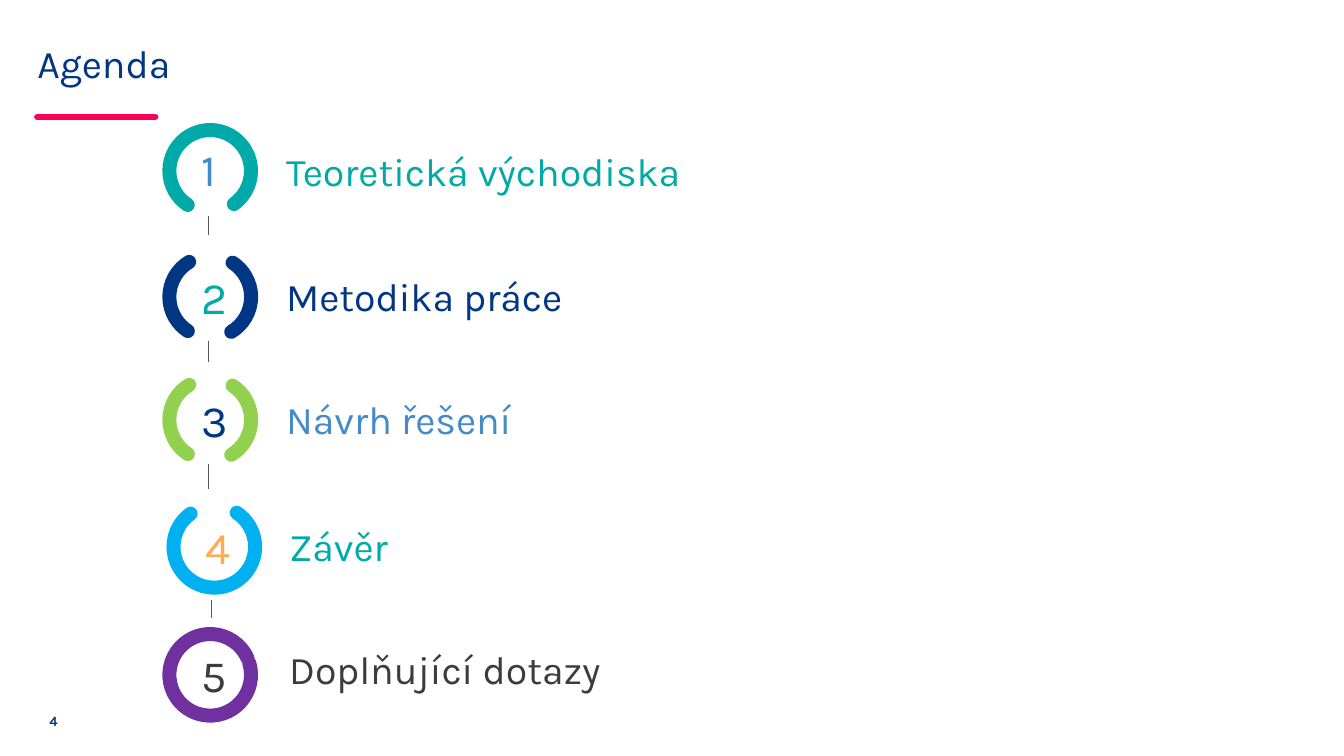
from dataclasses import dataclass

from lxml import etree
from pptx import Presentation
from pptx import util as u
from pptx.dml.color import RGBColor
from pptx.enum import shapes, text
from pptx.oxml import ns

NAVY = RGBColor(0x00, 0x36, 0x84)
TEAL = RGBColor(0x00, 0xAA, 0xA8)
BLUE = RGBColor(0x45, 0x8A, 0xC9)
SKY = RGBColor(0x00, 0xB0, 0xF0)
GREEN = RGBColor(0x92, 0xD0, 0x50)
PURPLE = RGBColor(0x70, 0x30, 0xA0)
ORANGE = RGBColor(0xFF, 0xAC, 0x50)
PINK = RGBColor(0xFA, 0x00, 0x57)
GREY = RGBColor(0x57, 0x57, 0x56)
DARK = RGBColor(0x3C, 0x3C, 0x3C)

FONT = "Karla"
RING_SIZE = 0.81
NUMBER_WIDTH = 0.34
OPEN_RING = (74.016, 32.676)
HALF_RING = (127.894, 197.433)
CLOSED_RING = (36.905, 32.676)


@dataclass(frozen=True)
class Step:
    label: str
    ring_left: float
    ring_top: float
    number_top: float
    label_left: float
    label_top: float
    ring_color: RGBColor
    number_color: RGBColor
    label_color: RGBColor
    arc: tuple[float, float]
    rotations: tuple[float, ...]


@dataclass(frozen=True)
class Link:
    x: float
    top: float
    bottom: float


STEPS = [
    Step("Teoretická východiska", 1.68, 1.29, 1.35, 2.74, 1.41,
         TEAL, BLUE, TEAL, OPEN_RING, (0,)),
    Step("Metodika práce", 1.68, 2.54, 2.62, 2.74, 2.65,
         NAVY, TEAL, NAVY, HALF_RING, (270, 90)),
    Step("Návrh řešení", 1.68, 3.76, 3.84, 2.74, 3.87,
         GREEN, NAVY, BLUE, HALF_RING, (270, 90)),
    Step("Závěr", 1.72, 5.02, 5.1, 2.77, 5.13,
         SKY, ORANGE, TEAL, OPEN_RING, (180,)),
    Step("Doplňující dotazy", 1.68, 6.29, 6.37, 2.77, 6.35,
         PURPLE, DARK, DARK, CLOSED_RING, (281.5,)),
]
LINKS = [Link(2.07, 2.14, 2.33), Link(2.07, 3.38, 3.59),
         Link(2.07, 4.6, 4.85), Link(2.1, 5.95, 6.13)]


def write(frame, content: str, *, size: float, color: RGBColor, bold: bool = False,
          align=text.PP_ALIGN.LEFT, wrap: bool = True, inset: bool = True,
          grow: bool = True, spacing: float | None = None) -> None:
    frame.word_wrap = wrap
    frame.auto_size = text.MSO_AUTO_SIZE.SHAPE_TO_FIT_TEXT if grow else text.MSO_AUTO_SIZE.NONE
    frame.vertical_anchor = text.MSO_ANCHOR.MIDDLE
    if not inset:
        frame.margin_left = frame.margin_right = frame.margin_top = frame.margin_bottom = 0
    para = frame.paragraphs[0]
    para.alignment = align
    if spacing:
        para.line_spacing = u.Pt(spacing)
    span = para.add_run()
    span.text = content
    span.font.name = FONT
    span.font.size = u.Pt(size)
    span.font.bold = bold
    span.font.color.rgb = color


def add_box(page, left: float, top: float, width: float, height: float):
    return page.shapes.add_textbox(
        u.Inches(left), u.Inches(top), u.Inches(width), u.Inches(height)).text_frame


def style_line(shape, color: RGBColor, width: float, rounded: bool = False) -> None:
    shape.line.color.rgb = color
    shape.line.width = u.Pt(width)
    if rounded:
        shape.line._get_or_add_ln().set("cap", "rnd")


def draw_line(page, start: tuple[float, float], end: tuple[float, float],
              color: RGBColor, width: float, rounded: bool = False) -> None:
    line = page.shapes.add_connector(
        shapes.MSO_CONNECTOR.STRAIGHT, *(u.Inches(value) for value in (*start, *end)))
    style_line(line, color, width, rounded)
    etree.SubElement(line._element.spPr, ns.qn("a:effectLst"))


def draw_step(page, number: int, step: Step) -> None:
    for rotation in step.rotations:
        ring = page.shapes.add_shape(
            shapes.MSO_SHAPE.ARC, u.Inches(step.ring_left), u.Inches(step.ring_top),
            u.Inches(RING_SIZE), u.Inches(RING_SIZE))
        ring.adjustments[0], ring.adjustments[1] = step.arc
        ring.rotation = rotation
        ring.shadow.inherit = False
        ring.fill.background()
        style_line(ring, step.ring_color, 10, rounded=True)
    number_left = step.ring_left + (RING_SIZE - NUMBER_WIDTH) / 2 - 0.01
    write(add_box(page, number_left, step.number_top, NUMBER_WIDTH, 0.64), str(number),
          size=32, color=step.number_color, align=text.PP_ALIGN.CENTER)
    write(add_box(page, step.label_left, step.label_top, 10.23, 0.57), step.label,
          size=28, color=step.label_color)


def main() -> None:
    deck = Presentation()
    deck.slide_width = u.Inches(13.33)
    deck.slide_height = u.Inches(7.5)
    page = deck.slides.add_slide(deck.slide_layouts[5])

    title = page.shapes.title
    title.left, title.top = u.Inches(0.37), u.Inches(0.17)
    title.width, title.height = u.Inches(12.6), u.Inches(0.99)
    write(title.text_frame, "Agenda", size=28, color=NAVY, inset=False, grow=False, spacing=28)
    draw_line(page, (0.37, 1.16), (1.54, 1.16), PINK, 4.5, rounded=True)

    for link in LINKS:
        draw_line(page, (link.x, link.top), (link.x, link.bottom), GREY, 0.5)
    for number, step in enumerate(STEPS, start=1):
        draw_step(page, number, step)

    write(add_box(page, 0.49, 7.07, 0.08, 0.17), "4", size=10, color=NAVY, bold=True,
          align=text.PP_ALIGN.RIGHT, wrap=False, inset=False)
    deck.save("out.pptx")


if __name__ == "__main__":
    main()
